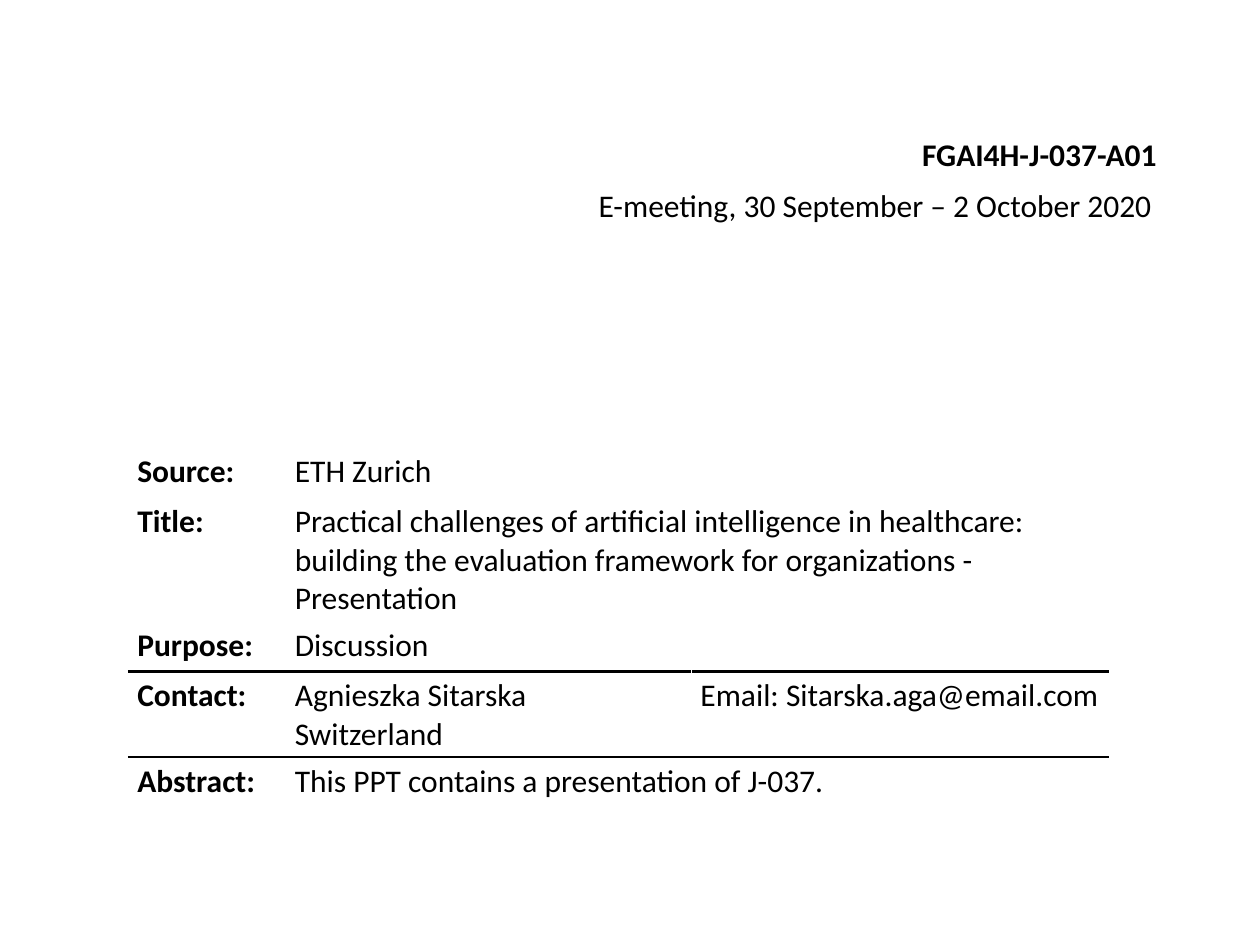
import lxml.etree
import pptx
import pptx.enum.text
import pptx.oxml.ns
import pptx.util
from pptx.dml.color import RGBColor
from pptx.util import Inches

COLORS = {"text": "000000", "rule": "000000"}


class Deck:
    font = "Calibri"
    size = 18
    rule_width = 1.5

    def __init__(self, prs):
        self.slide = prs.slides.add_slide(prs.slide_layouts[6])

    def style(self, p, bold):
        p.font.name = self.font
        p.font.size = pptx.util.Pt(self.size)
        p.font.bold = bold
        p.font.color.rgb = RGBColor.from_string(COLORS["text"])

    def heading(self, text, x, y, w, h, bold=False):
        tf = self.slide.shapes.add_textbox(Inches(x), Inches(y), Inches(w), Inches(h)).text_frame
        tf.word_wrap = False
        tf.auto_size = pptx.enum.text.MSO_AUTO_SIZE.SHAPE_TO_FIT_TEXT
        p = tf.paragraphs[0]
        p.text = text
        p.alignment = pptx.enum.text.PP_ALIGN.RIGHT
        self.style(p, bold)

    def rule(self, cell, side):
        tc_pr = cell._tc.get_or_add_tcPr()
        ln = lxml.etree.Element(pptx.oxml.ns.qn(f"a:ln{side}"), w=str(pptx.util.Pt(self.rule_width)))
        fill = lxml.etree.SubElement(ln, pptx.oxml.ns.qn("a:solidFill"))
        lxml.etree.SubElement(fill, pptx.oxml.ns.qn("a:srgbClr"), val=COLORS["rule"])
        tc_pr.insert(0, ln)

    def cell(self, cell, text, bold):
        cell.margin_left = cell.margin_right = Inches(0.07)
        cell.margin_top = cell.margin_bottom = Inches(0.04)
        cell.fill.background()
        cell.text = text
        for p in cell.text_frame.paragraphs:
            self.style(p, bold)

    def table(self, rows, x, y, widths, row_height, ruled_rows):
        table = self.slide.shapes.add_table(
            len(rows), len(widths), Inches(x), Inches(y),
            Inches(sum(widths)), Inches(row_height * len(rows))).table
        table.first_row = table.horz_banding = False
        for column, width in zip(table.columns, widths):
            column.width = Inches(width)
        for i, texts in enumerate(rows):
            table.rows[i].height = Inches(row_height)
            if len(texts) < len(widths):
                table.cell(i, len(texts) - 1).merge(table.cell(i, len(widths) - 1))
            for j, text in enumerate(texts):
                self.cell(table.cell(i, j), text, bold=j == 0)
            for j in range(len(widths)):
                if i in ruled_rows:
                    self.rule(table.cell(i, j), "B")
                if i - 1 in ruled_rows:
                    self.rule(table.cell(i, j), "T")


def main():
    prs = pptx.Presentation()
    prs.slide_width, prs.slide_height = Inches(10), Inches(7.5)
    deck = Deck(prs)
    deck.heading("FGAI4H-J-037-A01", 7.19, 1.02, 2.09, 0.4, bold=True)
    deck.heading("E-meeting, 30 September – 2 October 2020", 4.59, 1.43, 4.65, 0.4)
    rows = [
        ["Source:", "ETH Zurich"],
        ["Title:", "Practical challenges of artificial intelligence in healthcare: "
                   "building the evaluation framework for organizations - Presentation"],
        ["Purpose:", "Discussion"],
        ["Contact:", "Agnieszka Sitarska\nSwitzerland", "Email: Sitarska.aga@email.com"],
        ["Abstract:", "This PPT contains a presentation of J-037."],
    ]
    deck.table(rows, 1.02, 3.55, [1.25, 3.22, 3.31], 0.4, ruled_rows=(2, 3))
    prs.save("out.pptx")


if __name__ == "__main__":
    main()
